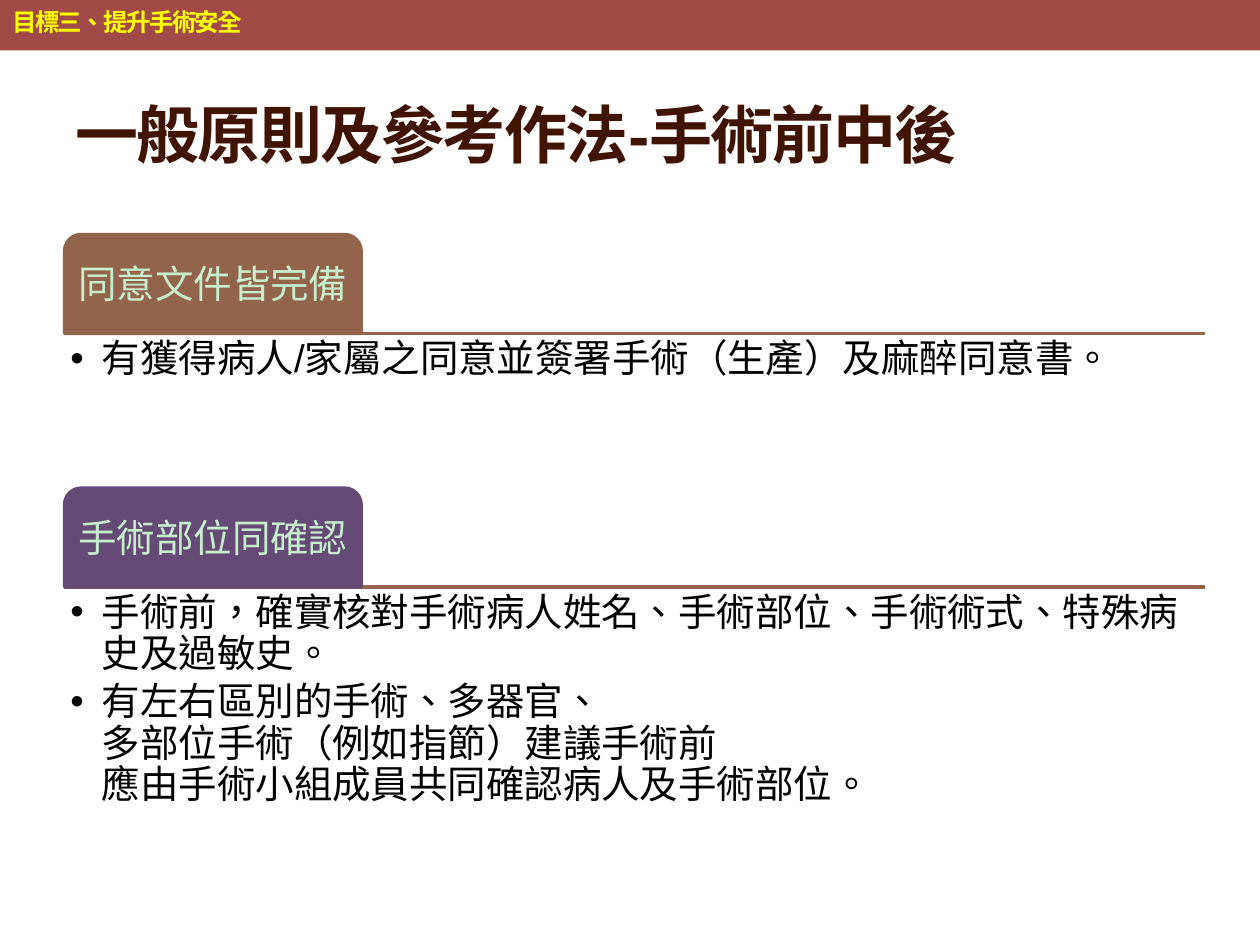
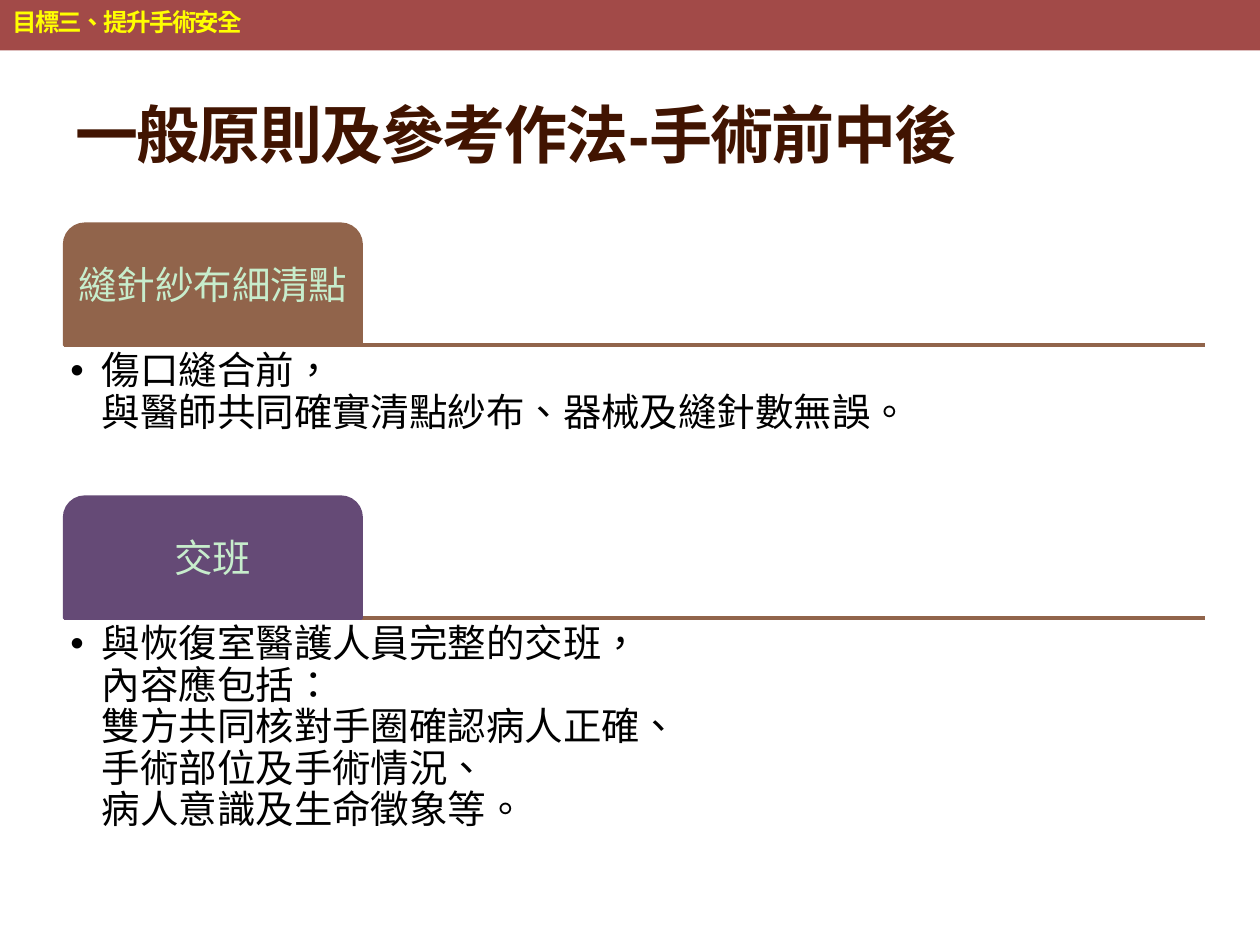
"""Two slides on surgical safety: tabbed sections under a shared band and title."""
from lxml import etree
from pptx import Presentation
from pptx import util as u
from pptx.dml.color import RGBColor
from pptx.enum import lang, shapes, text
from pptx.oxml import ns

BAND = RGBColor(0xA2, 0x4A, 0x48)
TITLE = RGBColor(0x41, 0x14, 0x01)
TOPIC = RGBColor(0xFF, 0xFF, 0x00)
BROWN = RGBColor(0x91, 0x64, 0x4B)
PURPLE = RGBColor(0x65, 0x4A, 0x76)
MINT = RGBColor(0xC7, 0xED, 0xCC)
BLACK = RGBColor(0, 0, 0)
WHITE = RGBColor(0xFF, 0xFF, 0xFF)

COLUMNS, ROWS = 100, 75
LEFT, WIDTH, TAB_LEFT, TAB_WIDTH = 5.1, 90.55, 5.13, 23.53
INSET = u.Inches(0.05)
RULE_WIDTH = u.Pt(2.08)


class SafetyDeck:
    """Hold the style, the grid and the current page."""

    def __init__(self):
        self.deck = Presentation()
        self.deck.slide_width, self.deck.slide_height = u.Inches(10), u.Inches(7.5)
        self.page = None

    def grid(self, column, row):
        return (round(self.deck.slide_width * column / COLUMNS),
                round(self.deck.slide_height * row / ROWS))

    def add_page(self, topic, title):
        self.page = self.deck.slides.add_slide(self.deck.slide_layouts[6])
        fill = self.page.background.fill
        fill.solid()
        fill.fore_color.rgb = WHITE
        self.shape(shapes.MSO_SHAPE.RECTANGLE, 0, 0, COLUMNS, 4, BAND)
        heading = self.text([title], 5, 3.7, 90, 10.8, 36, TITLE, bold=True, spacing=1.5)
        heading.vertical_anchor = text.MSO_ANCHOR.MIDDLE
        label = self.text([topic], 0, 0.1, 20.3, 3.4, 14, TOPIC, bold=True,
                          font="Noto Sans CJK SC")
        label.word_wrap = False

    def shape(self, kind, column, row, width, height, colour):
        shape = self.page.shapes.add_shape(
            kind, *self.grid(column, row), *self.grid(width, height))
        shape.shadow.inherit = False
        shape.fill.solid()
        shape.fill.fore_color.rgb = colour
        shape.line.fill.background()
        return shape

    def text(self, items, column, row, width, height, size, colour,
             bold=False, spacing=1.0, font="Arial"):
        box = self.page.shapes.add_textbox(
            *self.grid(column, row), *self.grid(width, height))
        frame = box.text_frame
        frame.word_wrap = True
        for index, words in enumerate(items):
            para = frame.add_paragraph() if index else frame.paragraphs[0]
            para.text = words
            para.line_spacing = spacing
            for span in para.runs:
                span.font.size, span.font.bold = u.Pt(size), bold
                span.font.name, span.font.color.rgb = font, colour
                span.font.language_id = lang.MSO_LANGUAGE_ID.TRADITIONAL_CHINESE
                if bold:
                    span.font._element.set("spc", "-100")
        return frame

    def tight_text(self, items, column, row, width, height, colour):
        frame = self.text(items, column, row, width, height, 22, colour, spacing=0.9)
        frame.margin_left = frame.margin_right = INSET
        frame.margin_top = frame.margin_bottom = INSET
        return frame

    def rule(self, row):
        line = self.page.shapes.add_connector(
            shapes.MSO_CONNECTOR.STRAIGHT, *self.grid(LEFT, row),
            *self.grid(LEFT + WIDTH, row))
        line.line.color.rgb, line.line.width = BROWN, RULE_WIDTH
        etree.SubElement(line._element.spPr, ns.qn("a:effectLst"))

    def tab(self, words, bottom, height, colour):
        top = bottom - height
        tab = self.shape(shapes.MSO_SHAPE.ROUND_2_SAME_RECTANGLE,
                         TAB_LEFT, top, TAB_WIDTH, height, colour)
        tab.adjustments[0] = 0.167
        tab.line.color.rgb, tab.line.width = colour, RULE_WIDTH
        frame = self.tight_text([words], TAB_LEFT + 0.4, top + 0.4, TAB_WIDTH - 0.8,
                                height - 0.4, MINT)
        frame.vertical_anchor = text.MSO_ANCHOR.MIDDLE
        frame.paragraphs[0].alignment = text.PP_ALIGN.CENTER

    def bullets(self, items, row, height):
        frame = self.tight_text(items, LEFT, row, WIDTH, height, BLACK)
        for para in frame.paragraphs:
            para.space_after = u.Pt(3.5)
            props = para._p.get_or_add_pPr()
            props.set("marL", str(u.Inches(0.25)))
            props.set("indent", str(-u.Inches(0.25)))
            etree.SubElement(props, ns.qn("a:buFont")).set("typeface", "Arial")
            etree.SubElement(props, ns.qn("a:buChar")).set("char", "•")

    def sections(self, tab_height, sections):
        for _, bottom, _, _, _ in reversed(sections):
            self.rule(bottom)
        for label, bottom, colour, items, height in sections:
            self.tab(label, bottom, tab_height, colour)
            self.bullets(items, bottom, height)


PAGES = [
    (7.84, [
        ("同意文件皆完備", 26.46, BROWN,
         ["有獲得病人/家屬之同意並簽署手術（生產）及麻醉同意書。"], 11.9),
        ("手術部位同確認", 46.58, PURPLE,
         ["手術前，確實核對手術病人姓名、手術部位、手術術式、特殊病史及過敏史。",
          "有左右區別的手術、多器官、\n多部位手術（例如指節）建議手術前\n"
          "應由手術小組成員共同確認病人及手術部位。"], 28.4),
    ]),
    (9.6, [
        ("縫針紗布細清點", 27.4, BROWN,
         ["傷口縫合前，\n與醫師共同確實清點紗布、器械及縫針數無誤。"], 11.6),
        ("交班", 49.06, PURPLE,
         ["與恢復室醫護人員完整的交班，\n內容應包括：\n雙方共同核對手圈確認病人正確、\n"
          "手術部位及手術情況、\n病人意識及生命徵象等。"], 19.1),
    ]),
]


def main():
    safety = SafetyDeck()
    for tab_height, sections in PAGES:
        safety.add_page("目標三、提升手術安全", "一般原則及參考作法-手術前中後")
        safety.sections(tab_height, sections)
    safety.deck.save("out.pptx")


if __name__ == "__main__":
    main()
